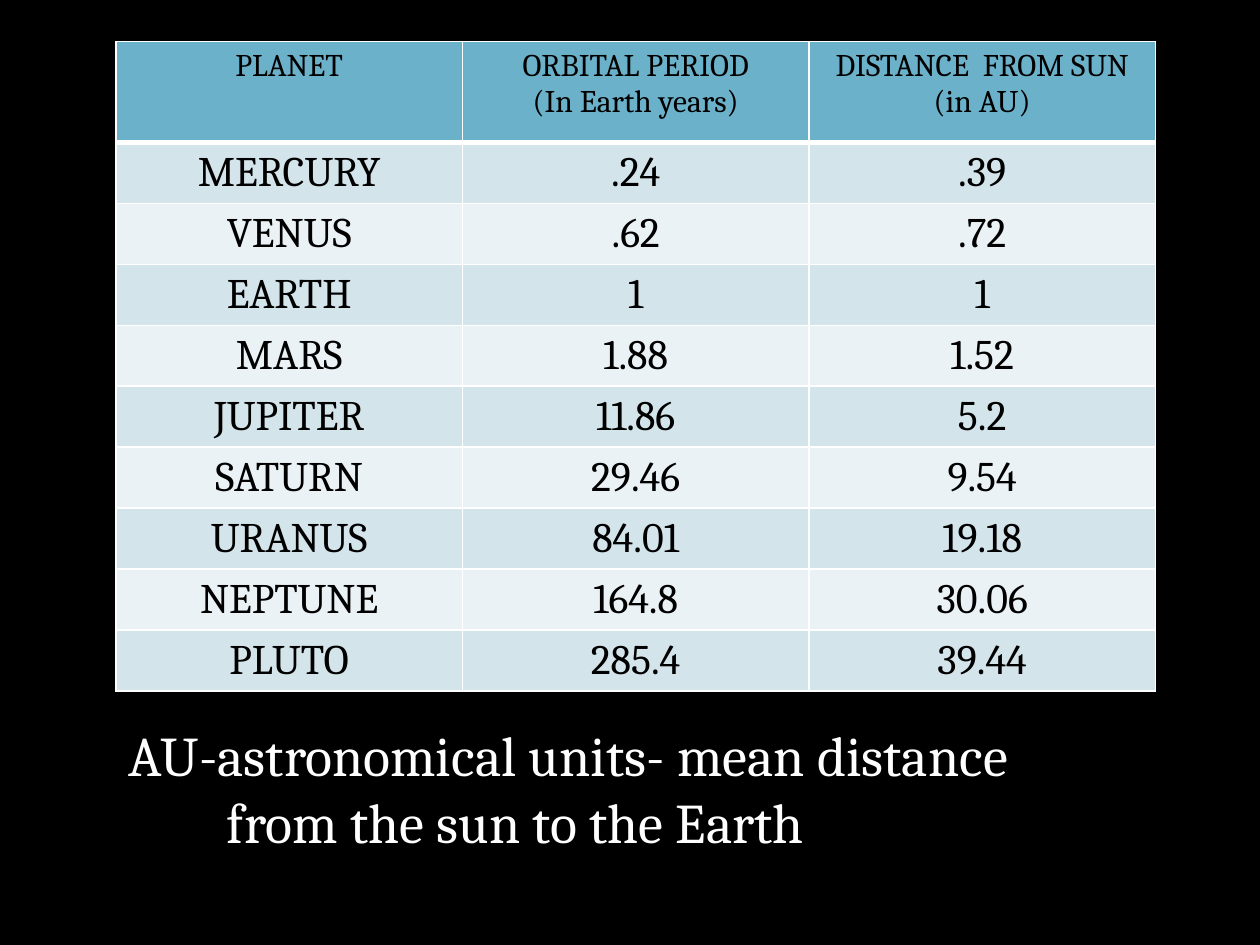
from lxml import etree
from pptx import Presentation
from pptx.dml.color import RGBColor
from pptx.enum.text import PP_ALIGN
from pptx.oxml.ns import qn
from pptx.util import Inches, Pt

CENTER = PP_ALIGN.CENTER
LEFT = PP_ALIGN.LEFT

FONT = "Cambria"
BLACK = "000000"
WHITE = "FFFFFF"
HEADER_FILL = "6BB1C9"
BAND_FILLS = ("D4E4EB", "EBF2F5")

LEFT_EDGE = 0.92
CONTENT_WIDTH = 8.25
HEADER_HEIGHT = 0.8
ROW_HEIGHT = 0.47

HEADINGS = (
    ("PLANET",),
    ("ORBITAL PERIOD", "(In Earth years)"),
    ("DISTANCE  FROM SUN (in AU)",),
)
PLANETS = (
    ("MERCURY", ".24", ".39"),
    ("VENUS", ".62", ".72"),
    ("EARTH", "1", "1"),
    ("MARS", "1.88", "1.52"),
    ("JUPITER", "11.86", "5.2"),
    ("SATURN", "29.46", "9.54"),
    ("URANUS", "84.01", "19.18"),
    ("NEPTUNE", "164.8", "30.06"),
    ("PLUTO", "285.4", "39.44"),
)


def set_fill(fill, color):
    fill.solid()
    fill.fore_color.rgb = RGBColor.from_string(color)


def write_lines(text_frame, lines, size, color=BLACK, align=CENTER):
    """Write each line as a paragraph of its own."""
    for index, line in enumerate(lines):
        paragraph = text_frame.paragraphs[0] if index == 0 else text_frame.add_paragraph()
        paragraph.alignment = align
        run = paragraph.add_run()
        run.text = line
        run.font.name = FONT
        run.font.size = Pt(size)
        run.font.color.rgb = RGBColor.from_string(color)


def set_borders(cell, bottom_width=1):
    properties = cell._tc.get_or_add_tcPr()
    widths = {"a:lnL": 1, "a:lnR": 1, "a:lnT": 1, "a:lnB": bottom_width}
    for tag, width in widths.items():
        line = etree.SubElement(properties, qn(tag), w=str(Pt(width)))
        solid = etree.SubElement(line, qn("a:solidFill"))
        etree.SubElement(solid, qn("a:srgbClr"), val=WHITE)


def fill_cell(cell, lines, size, color, bottom_width=1):
    set_borders(cell, bottom_width)
    set_fill(cell.fill, color)
    write_lines(cell.text_frame, lines, size)


def add_planet_table(slide):
    height = HEADER_HEIGHT + ROW_HEIGHT * len(PLANETS)
    table = slide.shapes.add_table(
        len(PLANETS) + 1, len(HEADINGS), Inches(LEFT_EDGE), Inches(0.33),
        Inches(CONTENT_WIDTH), Inches(height)).table
    for column in table.columns:
        column.width = Inches(CONTENT_WIDTH / len(HEADINGS))
    for row in table.rows:
        row.height = Inches(ROW_HEIGHT)
    table.rows[0].height = Inches(HEADER_HEIGHT)

    for column_index, lines in enumerate(HEADINGS):
        fill_cell(table.cell(0, column_index), lines, 18, HEADER_FILL, bottom_width=3)
    for row_index, planet in enumerate(PLANETS):
        color = BAND_FILLS[row_index % 2]
        for column_index, value in enumerate(planet):
            fill_cell(table.cell(row_index + 1, column_index), [value], 24, color)


def add_unit_note(slide):
    text_box = slide.shapes.add_textbox(
        Inches(LEFT_EDGE), Inches(5.67), Inches(CONTENT_WIDTH), Inches(1.18))
    text_frame = text_box.text_frame
    text_frame.word_wrap = True
    lines = ("AU-astronomical units- mean distance", "from the sun to the Earth")
    write_lines(text_frame, lines, 32, color=WHITE, align=LEFT)
    second_line = text_frame.paragraphs[1]
    second_line._p.get_or_add_pPr().set("marL", str(Inches(0.78)))


def main():
    presentation = Presentation()
    presentation.slide_width = Inches(10)
    presentation.slide_height = Inches(7.5)
    slide = presentation.slides.add_slide(presentation.slide_layouts[6])
    set_fill(slide.background.fill, BLACK)
    add_planet_table(slide)
    add_unit_note(slide)
    presentation.save("out.pptx")


if __name__ == "__main__":
    main()
